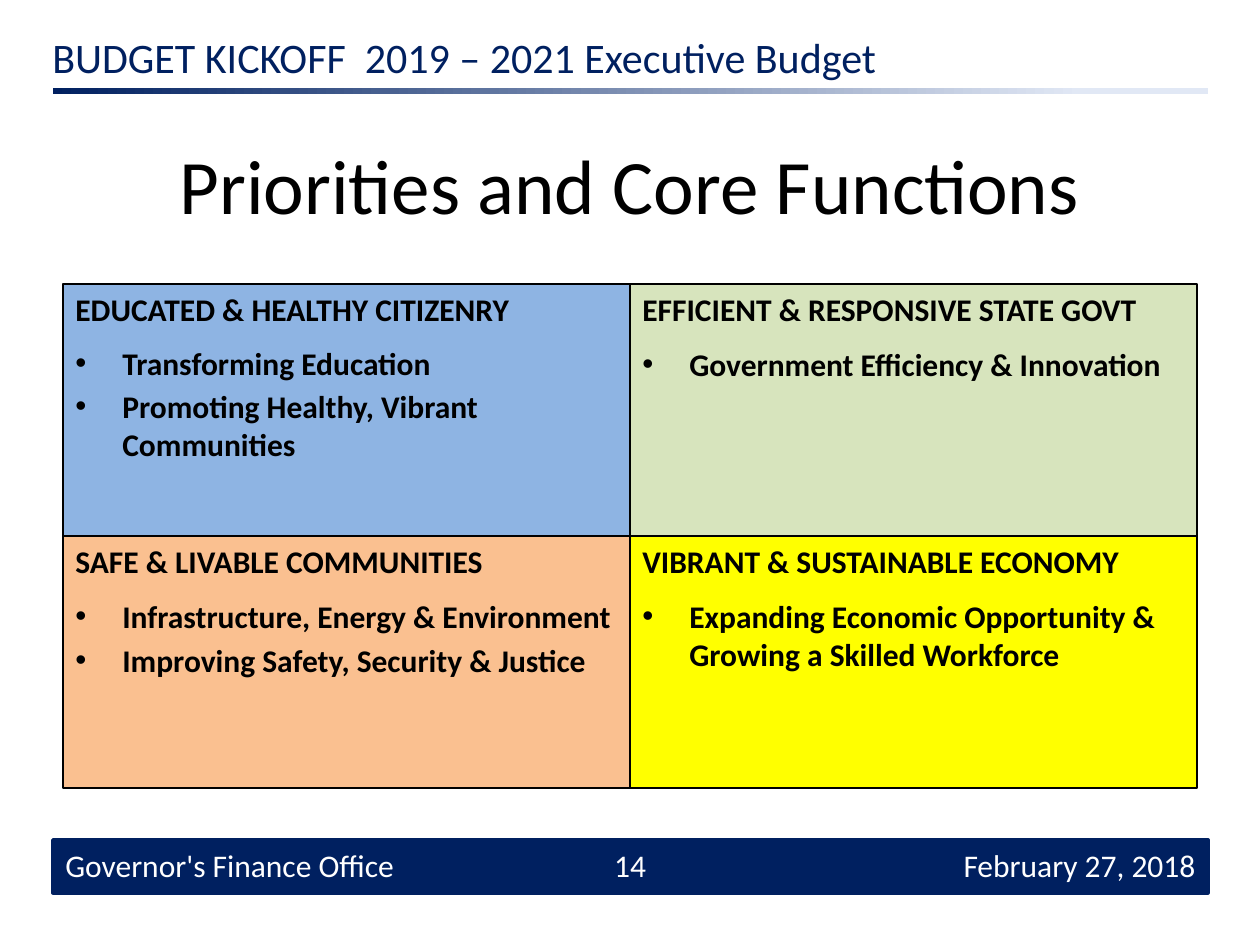
from lxml import etree
from pptx import Presentation
from pptx.dml.color import RGBColor
from pptx.enum.shapes import MSO_SHAPE
from pptx.enum.text import MSO_ANCHOR, PP_ALIGN
from pptx.oxml.ns import qn
from pptx.util import Emu, Pt

RECTANGLE = MSO_SHAPE.RECTANGLE
TOP, MIDDLE = MSO_ANCHOR.TOP, MSO_ANCHOR.MIDDLE
LEFT, CENTER, RIGHT = PP_ALIGN.LEFT, PP_ALIGN.CENTER, PP_ALIGN.RIGHT

NAVY = RGBColor(0x00, 0x20, 0x60)
PALE_BLUE = RGBColor(0xE1, 0xE8, 0xF5)
BLUE = RGBColor(0x8E, 0xB4, 0xE3)
GREEN = RGBColor(0xD7, 0xE4, 0xBD)
ORANGE = RGBColor(0xFA, 0xC0, 0x90)
YELLOW = RGBColor(0xFF, 0xFF, 0x00)
BLACK = RGBColor(0x00, 0x00, 0x00)
WHITE = RGBColor(0xFF, 0xFF, 0xFF)

FONT = "Calibri"
PX_PER_INCH = 126
GRID_LEFT, GRID_TOP = 63, 284
CELL_WIDTH, CELL_HEIGHT = 567, 252
BULLET_INDENT = 47

# Heading, fill, space before each bullet in points, bullets; row by row
PRIORITIES = [
    ("EDUCATED & HEALTHY CITIZENRY", BLUE, 3,
     ["Transforming Education", "Promoting Healthy, Vibrant Communities"]),
    ("EFFICIENT & RESPONSIVE STATE GOVT", GREEN, 3.6,
     ["Government Efficiency & Innovation"]),
    ("SAFE & LIVABLE COMMUNITIES", ORANGE, 3.6,
     ["Infrastructure, Energy & Environment",
      "Improving Safety, Security & Justice"]),
    ("VIBRANT & SUSTAINABLE ECONOMY", YELLOW, 3.6,
     ["Expanding Economic Opportunity & Growing a Skilled Workforce"]),
]


def px(length):
    return Emu(round(length * 914400 / PX_PER_INCH))


def set_font(para, size, color, bold=False):
    para.font.name = FONT
    para.font.size = Pt(size)
    para.font.color.rgb = color
    para.font.bold = bold


def add_text(page, left, top, width, height, text, size, color, align=LEFT):
    box = page.shapes.add_textbox(px(left), px(top), px(width), px(height))
    frame = box.text_frame
    frame.word_wrap = True
    frame.vertical_anchor = MIDDLE
    para = frame.paragraphs[0]
    para.text = text
    para.alignment = align
    set_font(para, size, color)


def add_rectangle(page, left, top, width, height):
    box = page.shapes.add_shape(
        RECTANGLE, px(left), px(top), px(width), px(height))
    box.shadow.inherit = False
    return box


def set_solid(box, fill, line, line_width):
    box.fill.solid()
    box.fill.fore_color.rgb = fill
    box.line.color.rgb = line
    box.line.width = Pt(line_width)


def add_gradient_rule(page, left, top, width, height):
    rule = add_rectangle(page, left, top, width, height)
    rule.line.fill.background()
    rule.fill.gradient()
    rule.fill.gradient_angle = 0
    stops = [(0, NAVY), (0.89, PALE_BLUE)]
    for stop, (position, color) in zip(rule.fill.gradient_stops, stops):
        stop.position = position
        stop.color.rgb = color


def set_bullet(para):
    properties = para._p.get_or_add_pPr()
    properties.set("marL", str(px(BULLET_INDENT)))
    properties.set("indent", str(-px(BULLET_INDENT)))
    etree.SubElement(properties, qn("a:buFont")).set("typeface", "Arial")
    etree.SubElement(properties, qn("a:buChar")).set("char", "•")


def add_priority(page, left, top, heading, fill, bullet_space, bullets):
    box = add_rectangle(page, left, top, CELL_WIDTH, CELL_HEIGHT)
    set_solid(box, fill, BLACK, 0.75)
    frame = box.text_frame
    frame.word_wrap = True
    frame.vertical_anchor = TOP

    title = frame.paragraphs[0]
    title.text = heading
    title.alignment = LEFT
    title.space_before = Pt(3.6)
    title.space_after = Pt(6)
    set_font(title, 18, BLACK, bold=True)

    for bullet in bullets:
        para = frame.add_paragraph()
        para.text = bullet
        para.alignment = LEFT
        para.space_before = Pt(bullet_space)
        set_bullet(para)
        set_font(para, 18, BLACK, bold=True)


def main():
    deck = Presentation()
    deck.slide_width, deck.slide_height = px(1260), px(945)
    page = deck.slides.add_slide(deck.slide_layouts[6])

    # Footer band and header
    band = add_rectangle(page, 53, 840, 1155, 53)
    set_solid(band, NAVY, NAVY, 2)
    add_gradient_rule(page, 53, 88, 1155, 6)
    add_text(page, 40, 32, 1168, 50,
             "BUDGET KICKOFF  2019 – 2021 Executive Budget", 24, NAVY)

    # Title
    add_text(page, 63, 116, 1134, 136,
             "Priorities and Core Functions", 44, BLACK, CENTER)

    # Footer texts
    for left, width, text, align in [
        (53, 577, "Governor's Finance Office", LEFT),
        (483, 294, "14", CENTER),
        (914, 294, "February 27, 2018", RIGHT),
    ]:
        add_text(page, left, 840, width, 50, text, 18, WHITE, align)

    # Two-by-two grid of priorities
    for index, priority in enumerate(PRIORITIES):
        row, column = divmod(index, 2)
        add_priority(page, GRID_LEFT + column * CELL_WIDTH,
                     GRID_TOP + row * CELL_HEIGHT, *priority)

    deck.save("out.pptx")


if __name__ == "__main__":
    main()
